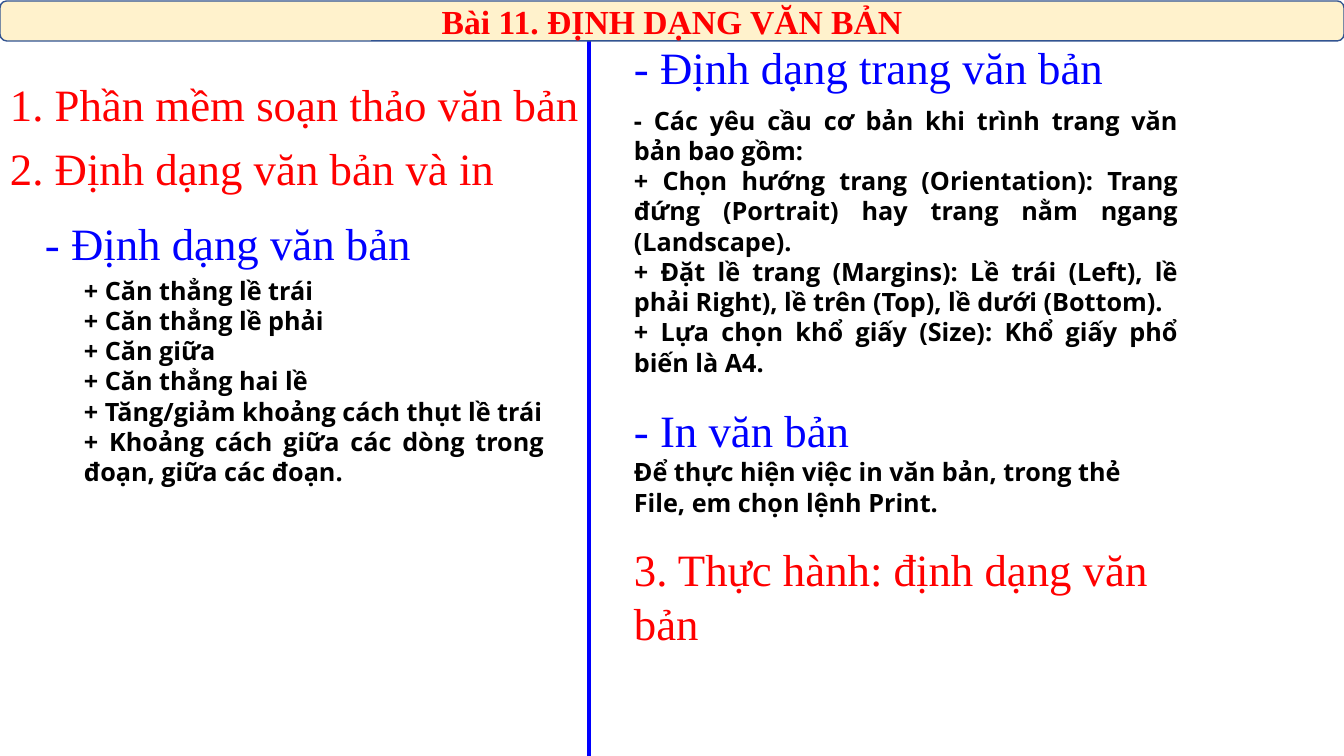
from lxml.etree import SubElement
from pptx import Presentation
from pptx.dml.color import RGBColor
from pptx.enum.shapes import MSO_CONNECTOR as Connector, MSO_SHAPE as Shape
from pptx.enum.text import MSO_ANCHOR as Anchor, MSO_AUTO_SIZE as AutoSize, PP_ALIGN as Align
from pptx.oxml.ns import qn
from pptx.util import Pt

COLORS = {
    "red": "FF0000",
    "blue": "0000FF",
    "black": "000000",
    "cream": "FFF2CC",
    "border": "325491",
}
EMU_PER_PX = 914400 / 100.8
RIGHT_COLUMN = 624


def px(*lengths):
    return [round(length * EMU_PER_PX) for length in lengths]


def write(frame, lines):
    frame.word_wrap = True
    for index, (text, size, font, color, bold, align) in enumerate(lines):
        paragraph = frame.add_paragraph() if index else frame.paragraphs[0]
        paragraph.text = text
        paragraph.alignment = align
        paragraph.font.size = Pt(size)
        paragraph.font.name = font
        paragraph.font.bold = bold
        paragraph.font.color.rgb = RGBColor.from_string(COLORS[color])


presentation = Presentation()
presentation.slide_width, presentation.slide_height = px(1344, 756)
slide = presentation.slides.add_slide(presentation.slide_layouts[6])

divider = slide.shapes.add_connector(Connector.STRAIGHT, *px(589, 41, 589, 756))
divider.line.color.rgb = RGBColor.from_string(COLORS["blue"])
divider.line.width = Pt(3)
SubElement(divider._element.spPr, qn("a:effectLst"))

banner = slide.shapes.add_shape(Shape.ROUNDED_RECTANGLE, *px(0, 1, 1344, 40))
banner.shadow.inherit = False
banner.fill.solid()
banner.fill.fore_color.rgb = RGBColor.from_string(COLORS["cream"])
banner.line.color.rgb = RGBColor.from_string(COLORS["border"])
banner.line.width = Pt(1)
banner.text_frame.vertical_anchor = Anchor.MIDDLE
write(banner.text_frame, [
    ("Bài 11. ĐỊNH DẠNG VĂN BẢN", 24, "Times New Roman", "red", True, Align.CENTER),
])

section = (32, "Times New Roman", "red", False, Align.LEFT)
topic = (32, "Times New Roman", "blue", False, Align.LEFT)
note = (18, "Open Sans", "black", True, Align.LEFT)
detail = (18, "Open Sans", "black", True, Align.JUSTIFY)

text_boxes = [
    ((0, 72, 596, 65), [("1. Phần mềm soạn thảo văn bản", *section)]),
    ((0, 136, 596, 65), [("2. Định dạng văn bản và in", *section)]),
    ((RIGHT_COLUMN, 537, 596, 119), [("3. Thực hành: định dạng văn bản", *section)]),
    ((35, 211, 432, 65), [("- Định dạng văn bản", *topic)]),
    ((RIGHT_COLUMN, 35, 498, 65), [("- Định dạng trang văn bản", *topic)]),
    ((RIGHT_COLUMN, 398, 560, 179), [
        ("- In văn bản", *topic),
        ("Để thực hiện việc in văn bản, trong thẻ File, em chọn lệnh Print.", *note),
    ]),
    ((RIGHT_COLUMN, 100, 564, 285), [
        ("- Các yêu cầu cơ bản khi trình trang văn bản bao gồm:", *detail),
        ("+ Chọn hướng trang (Orientation): Trang đứng (Portrait) hay trang nằm ngang (Landscape).", *detail),
        ("+ Đặt lề trang (Margins): Lề trái (Left), lề phải Right), lề trên (Top), lề dưới (Bottom).", *detail),
        ("+ Lựa chọn khổ giấy (Size): Khổ giấy phổ biến là A4.", *detail),
    ]),
    ((74, 270, 480, 224), [
        ("+ Căn thẳng lề trái", *detail),
        ("+ Căn thẳng lề phải", *detail),
        ("+ Căn giữa", *detail),
        ("+ Căn thẳng hai lề", *detail),
        ("+ Tăng/giảm khoảng cách thụt lề trái", *detail),
        ("+ Khoảng cách giữa các dòng trong đoạn, giữa các đoạn.", *detail),
    ]),
]
for bounds, lines in text_boxes:
    text_box = slide.shapes.add_textbox(*px(*bounds))
    text_box.text_frame.auto_size = AutoSize.SHAPE_TO_FIT_TEXT
    write(text_box.text_frame, lines)

presentation.save("out.pptx")
